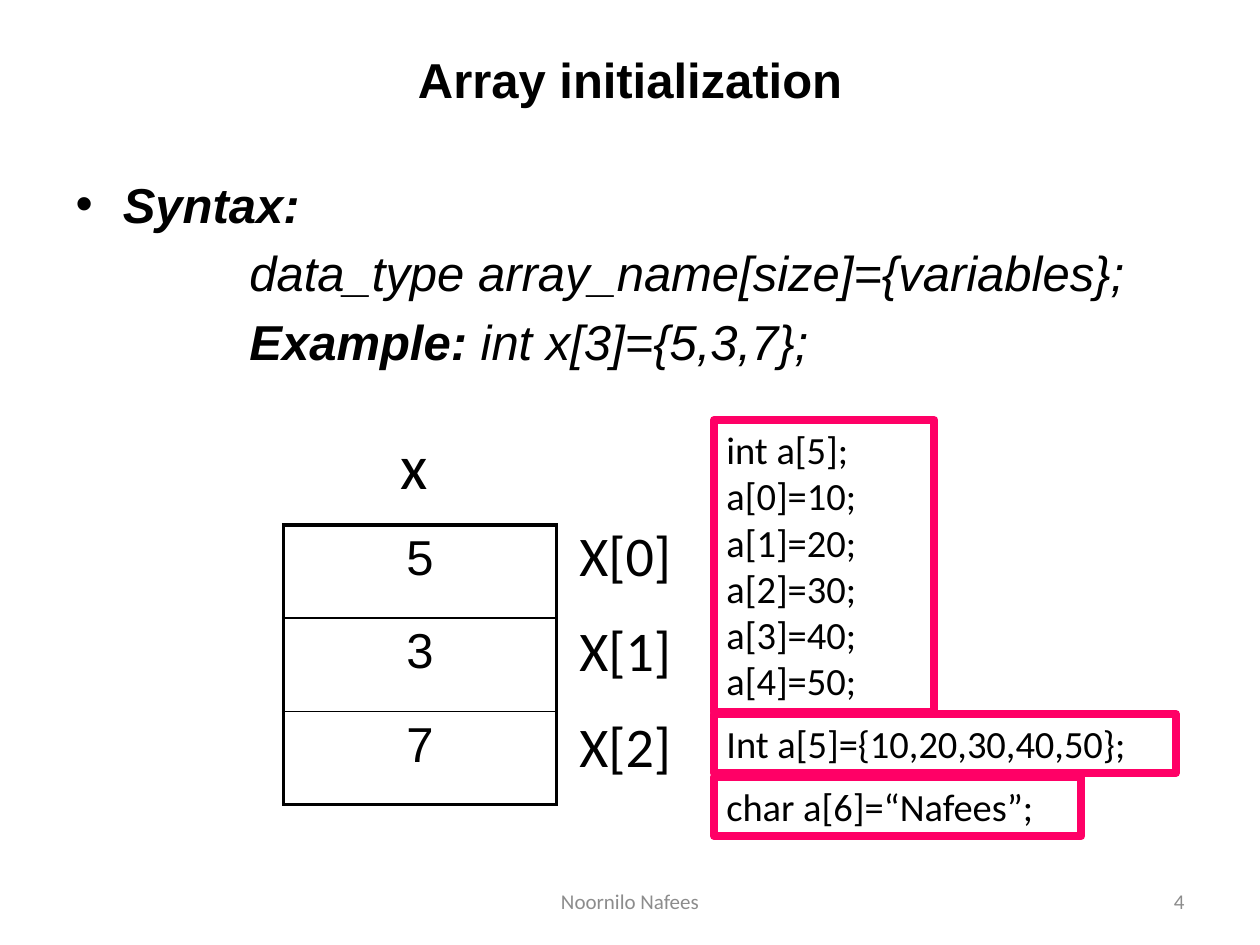
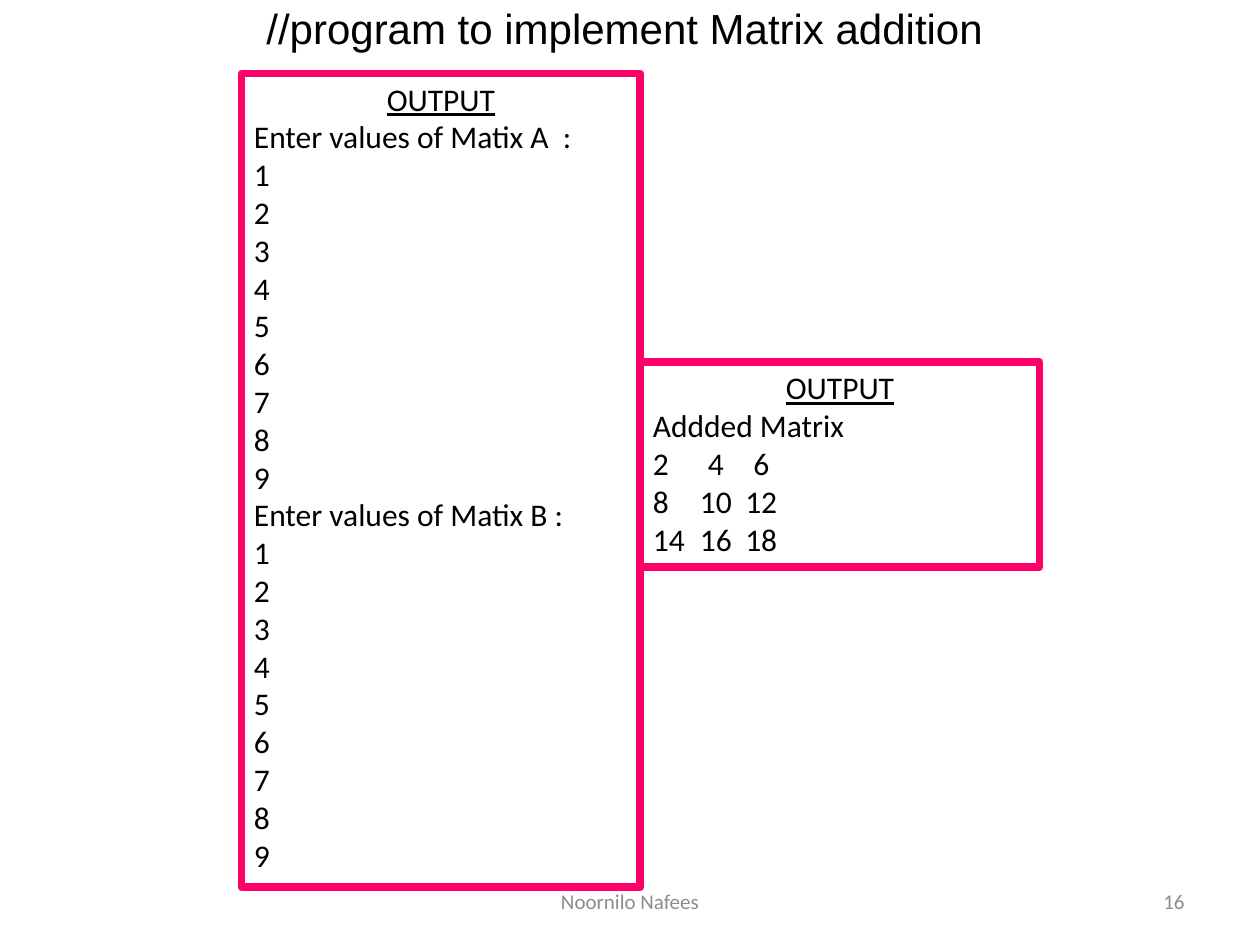
from lxml import etree
from pptx import Presentation
from pptx.dml.color import RGBColor
from pptx.enum.shapes import MSO_SHAPE
from pptx.enum.text import MSO_ANCHOR, MSO_AUTO_SIZE, PP_ALIGN
from pptx.oxml.ns import qn
from pptx.util import Inches, Pt

BLACK = RGBColor(0x00, 0x00, 0x00)
GRAY = RGBColor(0x8C, 0x8C, 0x8C)
PINK = RGBColor(0xFF, 0x00, 0x66)
HEADING_FONT = "Arial"
TEXT_FONT = "Calibri"
AUTHOR = "Noornilo Nafees"
WIDTH, HEIGHT = Inches(10), Inches(7.5)
COLS, ROWS = 120, 90
TITLE_AND_CONTENT, TITLE_ONLY = 1, 5


def grid(col, row, cols, rows):
    return (round(WIDTH * col / COLS), round(HEIGHT * row / ROWS),
            round(WIDTH * cols / COLS), round(HEIGHT * rows / ROWS))


def place(sp, area):
    sp.left, sp.top, sp.width, sp.height = grid(*area)


def style(p, size, font=TEXT_FONT, color=BLACK, align=PP_ALIGN.LEFT, before=0):
    p.font.size = Pt(size)
    p.font.name = font
    p.font.color.rgb = color
    p.alignment = align
    p.space_before = Pt(size * before)


def write(tf, lines, size, **look):
    tf.word_wrap = True
    tf.text = "\n".join(lines)
    for p in tf.paragraphs:
        style(p, size, **look)


def add_title(slide, text, area, size, bold=False):
    sp = slide.shapes.title
    place(sp, area)
    tf = sp.text_frame
    tf.auto_size = MSO_AUTO_SIZE.NONE
    tf.vertical_anchor = MSO_ANCHOR.MIDDLE
    write(tf, [text], size, font=HEADING_FONT, align=PP_ALIGN.CENTER)
    tf.paragraphs[0].font.bold = bold


def add_label(slide, lines, area, size, anchor=MSO_ANCHOR.TOP, **look):
    tf = slide.shapes.add_textbox(*grid(*area)).text_frame
    tf.vertical_anchor = anchor
    write(tf, lines, size, **look)


def add_footer(slide, number):
    for text, col, cols, align in ((AUTHOR, 41, 38, PP_ALIGN.CENTER),
                                   (str(number), 86, 28, PP_ALIGN.RIGHT)):
        add_label(slide, [text], (col, 83.4, cols, 4.8), 12,
                  anchor=MSO_ANCHOR.MIDDLE, color=GRAY, align=align)


def add_box(slide, lines, area, size):
    sp = slide.shapes.add_shape(MSO_SHAPE.RECTANGLE, *grid(*area))
    sp.shadow.inherit = False
    sp.fill.background()
    sp.line.color.rgb = PINK
    sp.line.width = Pt(4.5)
    tf = sp.text_frame
    tf.vertical_anchor = MSO_ANCHOR.TOP
    write(tf, lines, size)
    return tf


def add_output(slide, lines, area):
    tf = add_box(slide, ["OUTPUT"] + lines, area, 18)
    heading = tf.paragraphs[0]
    heading.alignment = PP_ALIGN.CENTER
    heading.font.underline = True
    return tf


def set_tabs(p, stops):
    tabs = etree.Element(qn("a:tabLst"))
    for stop in stops:
        etree.SubElement(tabs, qn("a:tab"), pos=str(Inches(stop)), algn="ctr")
    pPr = p._p.get_or_add_pPr()
    pPr.insert_element_before(tabs, "a:defRPr", "a:extLst")


def remove_bullet(p, indent):
    pPr = p._p.get_or_add_pPr()
    pPr.set("marL", str(Inches(indent)))
    pPr.set("indent", "0")
    none = etree.Element(qn("a:buNone"))
    pPr.insert_element_before(none, "a:tabLst", "a:defRPr", "a:extLst")


def add_syntax(slide, lines, area):
    sp = slide.placeholders[1]
    place(sp, area)
    tf = sp.text_frame
    tf.auto_size = MSO_AUTO_SIZE.NONE
    for i, runs in enumerate(lines):
        p = tf.add_paragraph() if i else tf.paragraphs[0]
        style(p, 28, font=HEADING_FONT, before=0.2)
        p.font.italic = True
        for text, bold in runs:
            r = p.add_run()
            r.text = text
            r.font.bold = bold
        if i:
            remove_bullet(p, 1.38)


def set_borders(cell, widths):
    tcPr = cell._tc.get_or_add_tcPr()
    for i, (side, width) in enumerate(widths.items()):
        ln = etree.Element(qn(f"a:ln{side}"), w=str(Pt(width)))
        fill = etree.SubElement(ln, qn("a:solidFill"))
        etree.SubElement(fill, qn("a:srgbClr"), val=str(BLACK))
        tcPr.insert(i, ln)


def add_array(slide, values, area):
    table = slide.shapes.add_table(len(values), 1, *grid(*area)).table
    table.first_row = False
    table.horz_banding = False
    thick, thin = 2.25, 1
    last = len(values) - 1
    for i, value in enumerate(values):
        cell = table.cell(i, 0)
        cell.fill.background()
        set_borders(cell, {"L": thick, "R": thick,
                           "T": thin if i else thick,
                           "B": thin if i < last else thick})
        write(cell.text_frame, [value], 28, font=HEADING_FONT,
              align=PP_ALIGN.CENTER, before=0.2)


def build_initialization(prs):
    slide = prs.slides.add_slide(prs.slide_layouts[TITLE_AND_CONTENT])
    add_title(slide, "Array initialization", (6, 0, 108, 15), 28, bold=True)
    add_syntax(slide, [
        [("Syntax:", True)],
        [("data_type array_name[size]={variables};", False)],
        [("Example: ", True), ("int x[3]={5,3,7};", False)],
    ], (6, 16, 108, 70))
    values = ["5", "3", "7"]
    add_array(slide, values, (27, 50, 26, 26.64))
    add_label(slide, [f"X[{i}]" for i in range(len(values))],
              (54, 49, 13, 26.8), 32, before=0.5)
    add_label(slide, ["x"], (37, 40, 6, 8.4), 36, before=0.5)
    assignments = [f"a[{i}]={10 * (i + 1)};" for i in range(5)]
    for lines, row, cols, rows in (
            (["int a[5];"] + assignments, 40, 21, 27.84),
            (["Int a[5]={10,20,30,40,50};"], 68, 44, 5.64),
            (["char a[6]=“Nafees”;"], 74, 35, 5.64)):
        add_box(slide, lines, (68, row, cols, rows), 22)
    add_footer(slide, 4)


def build_matrix_addition(prs):
    slide = prs.slides.add_slide(prs.slide_layouts[TITLE_ONLY])
    add_title(slide, "//program to implement Matrix addition",
              (4, -2, 111, 9.36), 24)
    digits = [str(n) for n in range(1, 10)]
    add_output(slide, ["Enter values of Matix A  :"] + digits
               + ["Enter values of Matix B :"] + digits, (23, 7, 38, 77.5))
    sums = ["\t".join(str(2 * n) for n in range(first, first + 3))
            for first in (1, 4, 7)]
    tf = add_output(slide, ["Addded Matrix"] + sums, (61, 34.5, 38, 19.5))
    for p in tf.paragraphs[2:]:
        set_tabs(p, (0.5, 0.86))
    add_footer(slide, 16)


def main():
    prs = Presentation()
    prs.slide_width, prs.slide_height = WIDTH, HEIGHT
    build_initialization(prs)
    build_matrix_addition(prs)
    prs.save("out.pptx")


if __name__ == "__main__":
    main()
